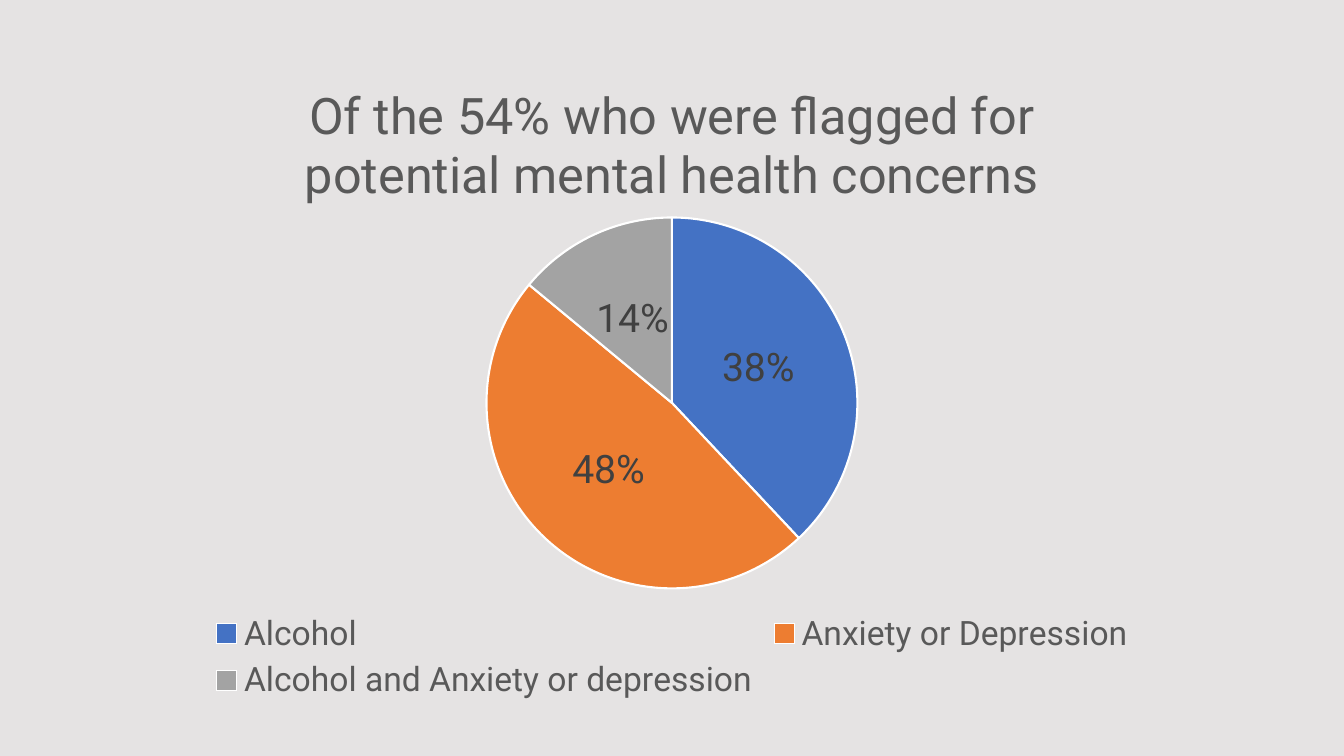
from dataclasses import dataclass

from lxml import etree
from pptx import Presentation
from pptx.chart.data import CategoryChartData
from pptx.dml.color import RGBColor
from pptx.enum.chart import XL_CHART_TYPE, XL_LABEL_POSITION, XL_LEGEND_POSITION
from pptx.enum.shapes import MSO_SHAPE
from pptx.oxml.ns import qn
from pptx.util import Pt

PIE = XL_CHART_TYPE.PIE
CENTER = XL_LABEL_POSITION.CENTER
BOTTOM = XL_LEGEND_POSITION.BOTTOM
RECT = MSO_SHAPE.RECTANGLE
WIDE, HIGH = 960, 540


@dataclass(frozen=True)
class Theme:
    font: str = "Roboto"
    back: str = "DBD8D8"
    text: str = "595959"
    label: str = "404040"
    edge: str = "FFFFFF"
    slices: tuple = ("4472C4", "ED7D31", "A3A3A3")
    title_size: int = 36
    label_size: int = 28
    legend_size: int = 24


THEME = Theme()
TITLE = "Of the 54% who were flagged for potential mental health concerns"
SHARES = {
    "Alcohol": 38,
    "Anxiety or Depression": 48,
    "Alcohol and Anxiety or depression": 14,
}


def color(code):
    return RGBColor.from_string(code)


def style(font, size, code):
    font.name = THEME.font
    font.size = Pt(size)
    font.bold = False
    font.color.rgb = color(code)


def add_back(slide, left, top, width, height):
    back = slide.shapes.add_shape(RECT, Pt(left), Pt(top), Pt(width), Pt(height))
    back.shadow.inherit = False
    back.fill.solid()
    back.fill.fore_color.rgb = color(THEME.back)
    back.line.fill.background()
    # 70 % opacity
    tint = back.fill._xPr.find(qn("a:solidFill"))[0]
    etree.SubElement(tint, qn("a:alpha")).set("val", "70000")


def place_plot(chart, x, y, w, h):
    """Fix the plot area, in fractions of the chart."""
    area = chart._chartSpace.chart.plotArea
    for old in area.findall(qn("c:layout")):
        area.remove(old)
    layout = etree.Element(qn("c:layout"))
    area.insert(0, layout)
    manual = etree.SubElement(layout, qn("c:manualLayout"))
    rules = {"layoutTarget": "inner", "xMode": "edge", "yMode": "edge",
             "x": x, "y": y, "w": w, "h": h}
    for tag, value in rules.items():
        etree.SubElement(manual, qn(f"c:{tag}")).set("val", str(value))


def add_pie(slide, left, top, width, height):
    data = CategoryChartData()
    data.categories = list(SHARES)
    data.add_series("Series 1", list(SHARES.values()))
    chart = slide.shapes.add_chart(
        PIE, Pt(left), Pt(top), Pt(width), Pt(height), data).chart
    chart.font.name = THEME.font

    # Title
    chart.has_title = True
    frame = chart.chart_title.text_frame
    frame.text = TITLE
    style(frame.paragraphs[0].runs[0].font, THEME.title_size, THEME.text)
    chart.chart_title.include_in_layout = False

    # Slices
    plot = chart.plots[0]
    plot.vary_by_categories = True
    for i, code in enumerate(THEME.slices):
        form = plot.series[0].points[i].format
        form.fill.solid()
        form.fill.fore_color.rgb = color(code)
        form.line.color.rgb = color(THEME.edge)
        form.line.width = Pt(1.5)
    place_plot(chart, 0.34, 0.25, 0.32, 0.57)

    # Labels
    plot.has_data_labels = True
    labels = plot.data_labels
    labels.show_percentage = True
    labels.show_value = False
    labels.number_format = "0%"
    labels.number_format_is_linked = False
    labels.position = CENTER
    style(labels.font, THEME.label_size, THEME.label)

    # Legend
    chart.has_legend = True
    chart.legend.position = BOTTOM
    chart.legend.include_in_layout = False
    style(chart.legend.font, THEME.legend_size, THEME.text)


def main():
    deck = Presentation()
    deck.slide_width, deck.slide_height = Pt(WIDE), Pt(HIGH)
    slide = deck.slides.add_slide(deck.slide_layouts[6])
    add_back(slide, 0, 0, WIDE, HIGH)
    add_pie(slide, 66, 38, WIDE - 2 * 66, 467)
    deck.save("out.pptx")


if __name__ == "__main__":
    main()
